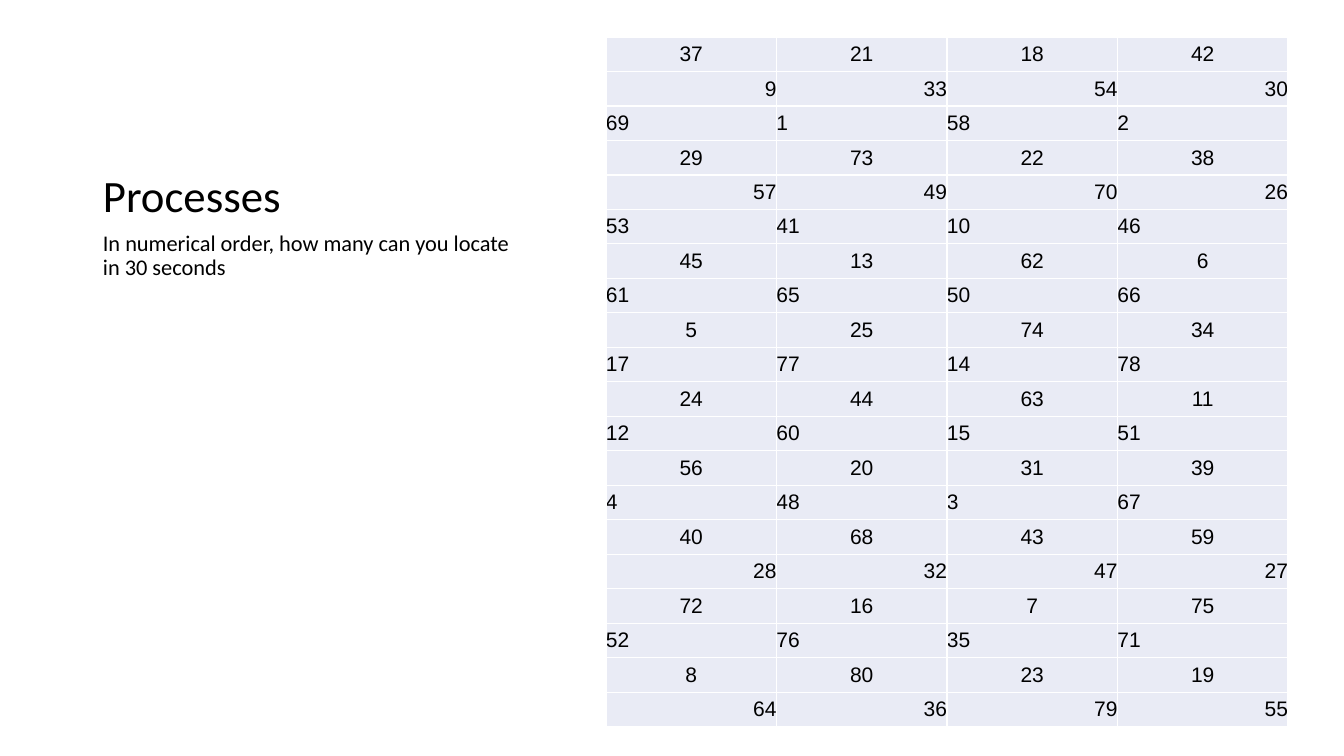
from dataclasses import dataclass
from typing import NamedTuple

from lxml import etree
from pptx import Presentation
from pptx import util as u
from pptx.dml.color import RGBColor
from pptx.enum import text
from pptx.oxml import ns

PX_PER_INCH = 100.8


@dataclass(frozen=True)
class Theme:
    ink: str = "000000"
    cell: str = "E9EBF5"
    border: str = "FFFFFF"
    heading_font: str = "Calibri"
    number_font: str = "Arial"
    title_size: int = 32
    body_size: int = 16
    number_size: int = 15
    border_width: int = 1


class Box(NamedTuple):
    left: int
    top: int
    width: int
    height: int


class TextBlock(NamedTuple):
    box: Box
    wording: str
    size: int
    anchor: text.MSO_ANCHOR
    space_before: int


class NumberRow(NamedTuple):
    alignment: text.PP_ALIGN
    numbers: tuple[int, ...]


THEME = Theme()
LEFT, CENTER, RIGHT = text.PP_ALIGN.LEFT, text.PP_ALIGN.CENTER, text.PP_ALIGN.RIGHT

TEXT_BLOCKS = [
    TextBlock(Box(93, 50, 433, 177), "Processes", THEME.title_size, text.MSO_ANCHOR.BOTTOM, 0),
    TextBlock(Box(93, 227, 433, 420), "In numerical order, how many can you locate in 30 seconds",
              THEME.body_size, text.MSO_ANCHOR.TOP, 10),
]

TABLE_BOX = Box(606, 37, 682, 690)
NUMBER_ROWS = [
    NumberRow(CENTER, (37, 21, 18, 42)),
    NumberRow(RIGHT, (9, 33, 54, 30)),
    NumberRow(LEFT, (69, 1, 58, 2)),
    NumberRow(CENTER, (29, 73, 22, 38)),
    NumberRow(RIGHT, (57, 49, 70, 26)),
    NumberRow(LEFT, (53, 41, 10, 46)),
    NumberRow(CENTER, (45, 13, 62, 6)),
    NumberRow(LEFT, (61, 65, 50, 66)),
    NumberRow(CENTER, (5, 25, 74, 34)),
    NumberRow(LEFT, (17, 77, 14, 78)),
    NumberRow(CENTER, (24, 44, 63, 11)),
    NumberRow(LEFT, (12, 60, 15, 51)),
    NumberRow(CENTER, (56, 20, 31, 39)),
    NumberRow(LEFT, (4, 48, 3, 67)),
    NumberRow(CENTER, (40, 68, 43, 59)),
    NumberRow(RIGHT, (28, 32, 47, 27)),
    NumberRow(CENTER, (72, 16, 7, 75)),
    NumberRow(LEFT, (52, 76, 35, 71)),
    NumberRow(CENTER, (8, 80, 23, 19)),
    NumberRow(RIGHT, (64, 36, 79, 55)),
]


def px(length: int) -> u.Emu:
    return u.Emu(round(length * u.Inches(1) / PX_PER_INCH))


def add_run(paragraph, wording: str, font_name: str, size: int) -> None:
    run = paragraph.add_run()
    run.text = wording
    run.font.name = font_name
    run.font.size = u.Pt(size)
    run.font.color.rgb = RGBColor.from_string(THEME.ink)


def add_text_block(slide, block: TextBlock) -> None:
    frame = slide.shapes.add_textbox(*map(px, block.box)).text_frame
    frame.word_wrap = True
    frame.vertical_anchor = block.anchor
    paragraph = frame.paragraphs[0]
    paragraph.line_spacing = 0.9
    paragraph.space_before = u.Pt(block.space_before)
    add_run(paragraph, block.wording, THEME.heading_font, block.size)


def add_borders(cell) -> None:
    properties = cell._tc.get_or_add_tcPr()
    for side in ("a:lnL", "a:lnR", "a:lnT", "a:lnB"):
        line = etree.SubElement(properties, ns.qn(side), w=str(u.Pt(THEME.border_width)))
        fill = etree.SubElement(line, ns.qn("a:solidFill"))
        etree.SubElement(fill, ns.qn("a:srgbClr"), val=THEME.border)


def fill_cell(cell, number: int, alignment: text.PP_ALIGN) -> None:
    cell.margin_left = cell.margin_right = cell.margin_top = cell.margin_bottom = 0
    cell.vertical_anchor = text.MSO_ANCHOR.MIDDLE
    add_borders(cell)
    cell.fill.solid()
    cell.fill.fore_color.rgb = RGBColor.from_string(THEME.cell)
    paragraph = cell.text_frame.paragraphs[0]
    paragraph.alignment = alignment
    add_run(paragraph, str(number), THEME.number_font, THEME.number_size)


def add_number_table(slide, box: Box, rows: list[NumberRow]) -> None:
    """Add the number grid with equal columns and rows."""
    table = slide.shapes.add_table(len(rows), len(rows[0].numbers), *map(px, box)).table
    table.first_row = False
    table.horz_banding = False
    for row_index, row in enumerate(rows):
        for column_index, number in enumerate(row.numbers):
            fill_cell(table.cell(row_index, column_index), number, row.alignment)


def main() -> None:
    presentation = Presentation()
    presentation.slide_width, presentation.slide_height = px(1344), px(756)
    slide = presentation.slides.add_slide(presentation.slide_layouts[6])
    add_number_table(slide, TABLE_BOX, NUMBER_ROWS)
    for block in TEXT_BLOCKS:
        add_text_block(slide, block)
    presentation.save("out.pptx")


if __name__ == "__main__":
    main()
